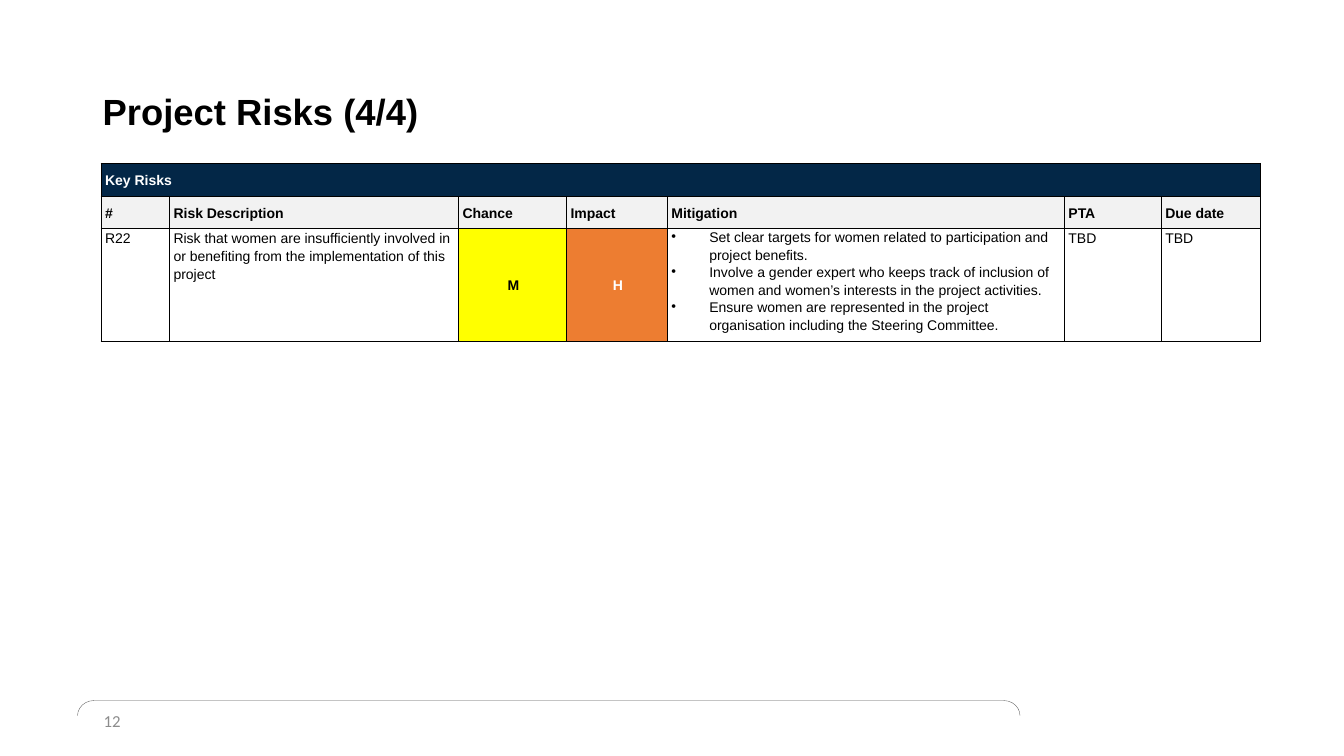
from lxml import etree
from pptx import Presentation
from pptx.dml.color import RGBColor
from pptx.enum import shapes, text
from pptx.oxml import ns
from pptx.util import Pt

COLORS = {
    "black": "000000", "white": "FFFFFF", "navy": "032747", "gray": "F2F2F2",
    "yellow": "FFFF00", "orange": "ED7D31", "number": "8C8C8C", "bracket": "595959",
}
COLUMN_WIDTHS = [48.9, 206.5, 77.1, 72.1, 283.6, 69.2, 70.6]
ROW_HEIGHTS = [23.8, 22.7, 75]
HEADINGS = ["#", "Risk Description", "Chance", "Impact", "Mitigation", "PTA", "Due date"]
MITIGATIONS = [
    "Set clear targets for women related to participation and project benefits.",
    "Involve a gender expert who keeps track of inclusion of women and women’s interests "
    "in the project activities.",
    "Ensure women are represented in the project organisation including the Steering Committee.",
]
RISK = [
    "R22",
    "Risk that women are insufficiently involved in or benefiting from the implementation "
    "of this project",
    "M", "H", "\n".join(MITIGATIONS), "TBD", "TBD",
]
RATINGS = {2: ("yellow", "black"), 3: ("orange", "white")}
MITIGATION_COLUMN = 4


def rgb(name):
    """Return the named colour."""
    return RGBColor.from_string(COLORS[name])


def set_font(paragraph, size, color, bold=False, face="Arial"):
    """Format the font of a whole paragraph."""
    font = paragraph.font
    font.name, font.size, font.bold = face, Pt(size), bold
    font.color.rgb = rgb(color)


def add_bullet(paragraph, indent):
    """Give a paragraph a round bullet with a hanging indent in points."""
    properties = paragraph._p.get_or_add_pPr()
    properties.set("marL", str(Pt(indent)))
    properties.set("indent", str(-Pt(indent)))
    etree.SubElement(properties, ns.qn("a:buChar"), char="•")


def add_borders(cell):
    """Draw a thin black line on all four sides of a cell."""
    properties = cell._tc.get_or_add_tcPr()
    for position, side in enumerate(("lnL", "lnR", "lnT", "lnB")):
        border = etree.Element(ns.qn(f"a:{side}"), w=str(Pt(0.75)))
        fill = etree.SubElement(border, ns.qn("a:solidFill"))
        etree.SubElement(fill, ns.qn("a:srgbClr"), val=COLORS["black"])
        properties.insert(position, border)


def fill_cell(cell, words, fill=None, color="black", bold=False, middle=False,
              centered=False, bulleted=False):
    """Write and format one cell of the risk table."""
    cell.margin_left, cell.margin_right = Pt(2.9), Pt(1.5)
    cell.margin_top = cell.margin_bottom = 0
    cell.vertical_anchor = text.MSO_ANCHOR.MIDDLE if middle else text.MSO_ANCHOR.TOP
    if fill:
        cell.fill.solid()
        cell.fill.fore_color.rgb = rgb(fill)
    else:
        cell.fill.background()
    cell.text = words
    for paragraph in cell.text_frame.paragraphs:
        paragraph.line_spacing = 1.12 if bulleted else 1.15
        if centered:
            paragraph.alignment = text.PP_ALIGN.CENTER
        if bulleted:
            add_bullet(paragraph, 27)
        set_font(paragraph, 10, color, bold)


def add_title(slide, left, top, width, height):
    """Place the slide title in the given box."""
    title = slide.shapes.title
    title.left, title.top, title.width, title.height = map(Pt, (left, top, width, height))
    title.text_frame.text = "Project Risks (4/4)"
    title.text_frame.vertical_anchor = text.MSO_ANCHOR.MIDDLE
    heading = title.text_frame.paragraphs[0]
    heading.alignment = text.PP_ALIGN.LEFT
    heading.line_spacing = 0.9
    set_font(heading, 26, "black", bold=True)


def add_risk_table(slide, left, top):
    """Build the key risks table from its top left corner."""
    risks = slide.shapes.add_table(
        len(ROW_HEIGHTS), len(COLUMN_WIDTHS), Pt(left), Pt(top),
        Pt(sum(COLUMN_WIDTHS)), Pt(sum(ROW_HEIGHTS))).table
    risks.horz_banding = False
    for column, width in zip(risks.columns, COLUMN_WIDTHS):
        column.width = Pt(width)
    for row, height in zip(risks.rows, ROW_HEIGHTS):
        row.height = Pt(height)
    risks.cell(0, 0).merge(risks.cell(0, len(COLUMN_WIDTHS) - 1))
    fill_cell(risks.cell(0, 0), "Key Risks", "navy", "white", bold=True, middle=True)
    for index, (heading, detail) in enumerate(zip(HEADINGS, RISK)):
        fill_cell(risks.cell(1, index), heading, "gray", bold=True, middle=True)
        rated = index in RATINGS
        fill, color = RATINGS.get(index, (None, "black"))
        fill_cell(risks.cell(2, index), detail, fill, color, bold=rated, middle=rated,
                  centered=rated, bulleted=index == MITIGATION_COLUMN)
    for cell in risks.iter_cells():
        add_borders(cell)


def add_footer(slide, left, top, width, height):
    """Draw the bracket over the footer box and the page number below it."""
    bracket = slide.shapes.add_shape(
        shapes.MSO_SHAPE.LEFT_BRACKET, Pt(left + (width - height) / 2),
        Pt(top + (height - width) / 2), Pt(height), Pt(width))
    bracket.rotation = 90
    bracket.adjustments[0] = 1.08
    bracket.shadow.inherit = False
    bracket.fill.background()
    bracket.line.color.rgb = rgb("bracket")
    bracket.line.width = Pt(0.25)

    number = slide.shapes.add_textbox(Pt(left + 11.5), Pt(top), Pt(216), Pt(28.8)).text_frame
    number.word_wrap = True
    number.vertical_anchor = text.MSO_ANCHOR.MIDDLE
    number.text = "12"
    set_font(number.paragraphs[0], 12, "number", face="Calibri")


def main():
    """Build and save the project risks slide."""
    deck = Presentation()
    deck.slide_width, deck.slide_height = Pt(960), Pt(540)
    slide = deck.slides.add_slide(deck.slide_layouts[5])
    add_footer(slide, 55.4, 500.4, 673.2, 10.8)
    add_title(slide, 66.2, 28.8, 828, 104.4)
    add_risk_table(slide, 72.2, 116.6)
    deck.save("out.pptx")


if __name__ == "__main__":
    main()
